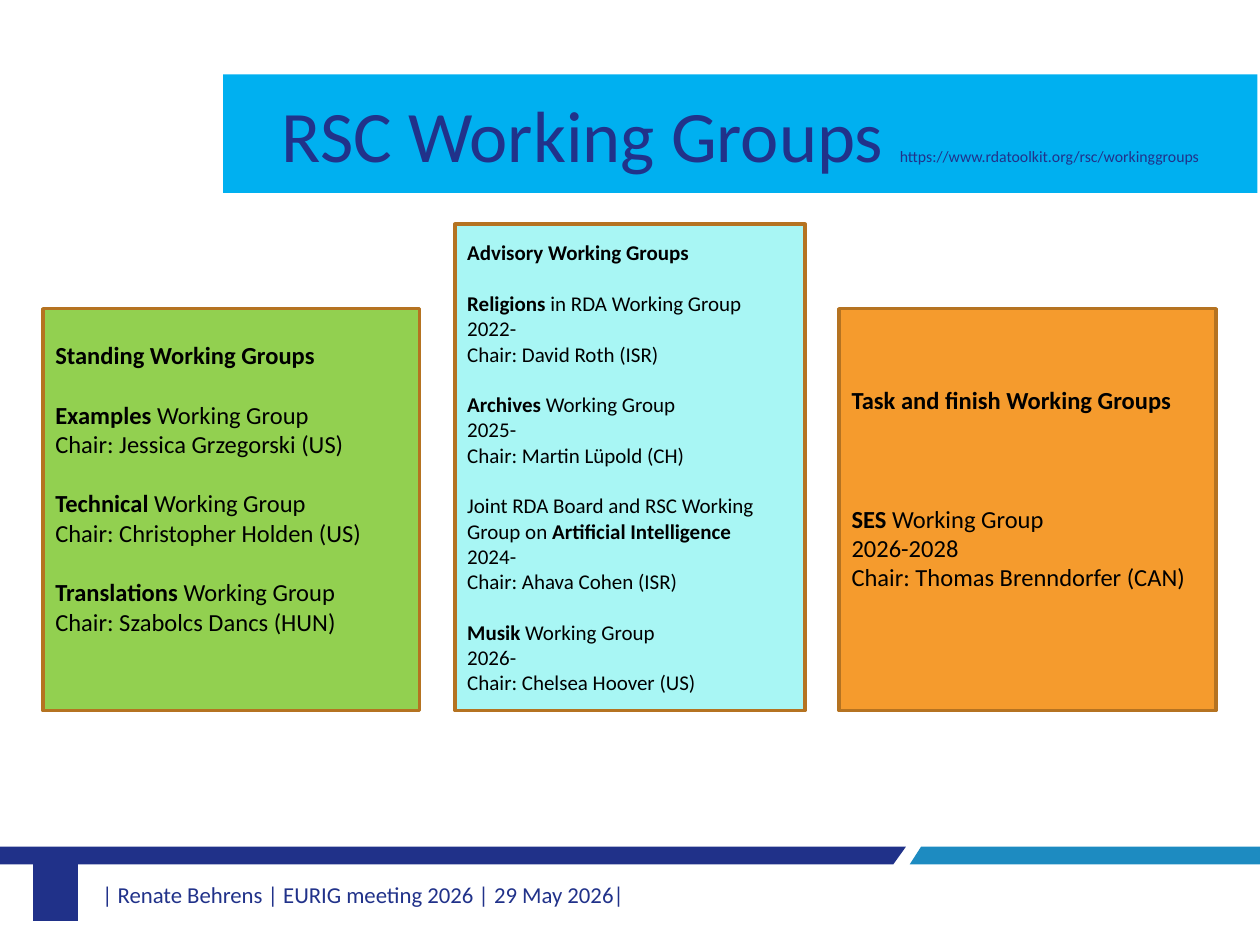
import pptx
import pptx.dml.color
import pptx.enum.shapes
import pptx.enum.text
import pptx.util

Inches = pptx.util.Inches
Pt = pptx.util.Pt
ALIGN = pptx.enum.text.PP_ALIGN

COLORS = {
    "navy": "203189", "blue": "1D8BC1", "text": "21328A", "banner": "00B0F0",
    "green": "92D050", "aqua": "A8F6F4", "orange": "F59B2D",
    "border": "B57321", "black": "000000",
}
LINE_HEIGHT = 1.22


class Deck:
    font = "Calibri"

    def __init__(self):
        self.prs = pptx.Presentation()
        self.prs.slide_width, self.prs.slide_height = Inches(10), Inches(7.5)
        self.s = self.prs.slides.add_slide(self.prs.slide_layouts[5])

    def fill(self, sp, color):
        sp.fill.solid()
        sp.fill.fore_color.rgb = self.rgb(color)

    @staticmethod
    def rgb(color):
        return pptx.dml.color.RGBColor.from_string(COLORS[color])

    def frame(self, sp, **margins):
        """Set middle anchoring, wrapping and margins in inches."""
        tf = sp.text_frame
        values = {"word_wrap": True, "auto_size": pptx.enum.text.MSO_AUTO_SIZE.NONE,
                  "vertical_anchor": pptx.enum.text.MSO_ANCHOR.MIDDLE}
        values.update({f"margin_{k}": Inches(v) for k, v in margins.items()})
        for name, value in values.items():
            setattr(tf, name, value)
        return tf

    def run(self, p, text, size, color, bold=False):
        r = p.add_run()
        r.text = text
        for name, value in {"name": self.font, "size": Pt(size), "bold": bold}.items():
            setattr(r.font, name, value)
        r.font.color.rgb = self.rgb(color)

    def title(self, box, runs):
        sp = self.s.shapes.title
        sp.left, sp.top, sp.width, sp.height = map(Inches, box)
        self.fill(sp, "banner")
        p = self.frame(sp, left=0.07, right=0.07, top=0.04, bottom=0.04).paragraphs[0]
        p.alignment = ALIGN.CENTER
        for text, size in runs:
            self.run(p, text, size, "text")

    def polygon(self, points, color):
        points = [(Inches(x), Inches(y)) for x, y in points]
        builder = self.s.shapes.build_freeform(*points[0])
        builder.add_line_segments(points[1:], close=True)
        sp = builder.convert_to_shape()
        sp.shadow.inherit = False
        self.fill(sp, color)
        sp.line.fill.background()

    def footer(self, box, text):
        sp = self.s.shapes.add_textbox(*map(Inches, box))
        tf = self.frame(sp, left=0.07, right=0.07, top=0.04, bottom=0.04)
        self.run(tf.paragraphs[0], text, 13, "text")

    def card(self, box, color, size, groups, gap_lines=1, bottom=0.05):
        """Draw a panel of line groups; text between asterisks is bold."""
        sp = self.s.shapes.add_shape(pptx.enum.shapes.MSO_SHAPE.RECTANGLE, *map(Inches, box))
        sp.shadow.inherit = False
        self.fill(sp, color)
        sp.line.color.rgb = self.rgb("border")
        sp.line.width = Pt(2)
        tf = self.frame(sp, bottom=bottom)
        for g, group in enumerate(groups):
            for i, line in enumerate(group):
                p = tf.add_paragraph() if g or i else tf.paragraphs[0]
                p.alignment = ALIGN.LEFT
                if g and not i:
                    p.space_before = Pt(round(gap_lines * size * LINE_HEIGHT, 1))
                for n, text in enumerate(line.split("*")):
                    if text:
                        self.run(p, text, size, "black", bold=n % 2 == 1)


STANDING = [
    ["*Standing Working Groups*"],
    ["*Examples* Working Group", "Chair: Jessica Grzegorski (US)"],
    ["*Technical* Working Group", "Chair: Christopher Holden (US)"],
    ["*Translations* Working Group", "Chair: Szabolcs Dancs (HUN)"],
]
ADVISORY = [
    ["*Advisory Working Groups*"],
    ["*Religions* in RDA Working Group", "2022-", "Chair: David Roth (ISR)"],
    ["*Archives* Working Group", "2025-", "Chair: Martin Lüpold (CH)"],
    ["Joint RDA Board and RSC Working Group on *Artificial Intelligence*",
     "2024-", "Chair: Ahava Cohen (ISR)"],
    ["*Musik* Working Group", "2026-", "Chair: Chelsea Hoover (US)"],
]
TASK = [
    ["*Task and finish Working Groups*"],
    ["*SES* Working Group", "2026-2028", "Chair: Thomas Brenndorfer (CAN)"],
]


def main():
    deck = Deck()
    top, bottom = 6.72, 6.86
    deck.polygon([(0, top), (7.19, top), (7.09, bottom), (0, bottom)], "navy")
    deck.polygon([(7.31, top), (10, top), (10, bottom), (7.22, bottom)], "blue")
    deck.polygon([(0.26, top), (0.62, top), (0.62, 7.31), (0.26, 7.31)], "navy")
    deck.footer((0.74, 6.9, 5.05, 0.4),
                "| Renate Behrens | EURIG meeting 2026 | 29 May 2026|")
    deck.title((1.77, 0.59, 8.21, 0.94),
               [("RSC Working Groups ", 41.4),
                ("https://www.rdatoolkit.org/rsc/workinggroups", 9)])
    deck.card((0.34, 2.45, 2.99, 3.19), "green", 14, STANDING, bottom=0.39)
    deck.card((3.61, 1.78, 2.78, 3.86), "aqua", 12, ADVISORY)
    deck.card((6.66, 2.45, 2.99, 3.19), "orange", 14, TASK, gap_lines=3, bottom=0.39)
    deck.prs.save("out.pptx")


if __name__ == "__main__":
    main()
